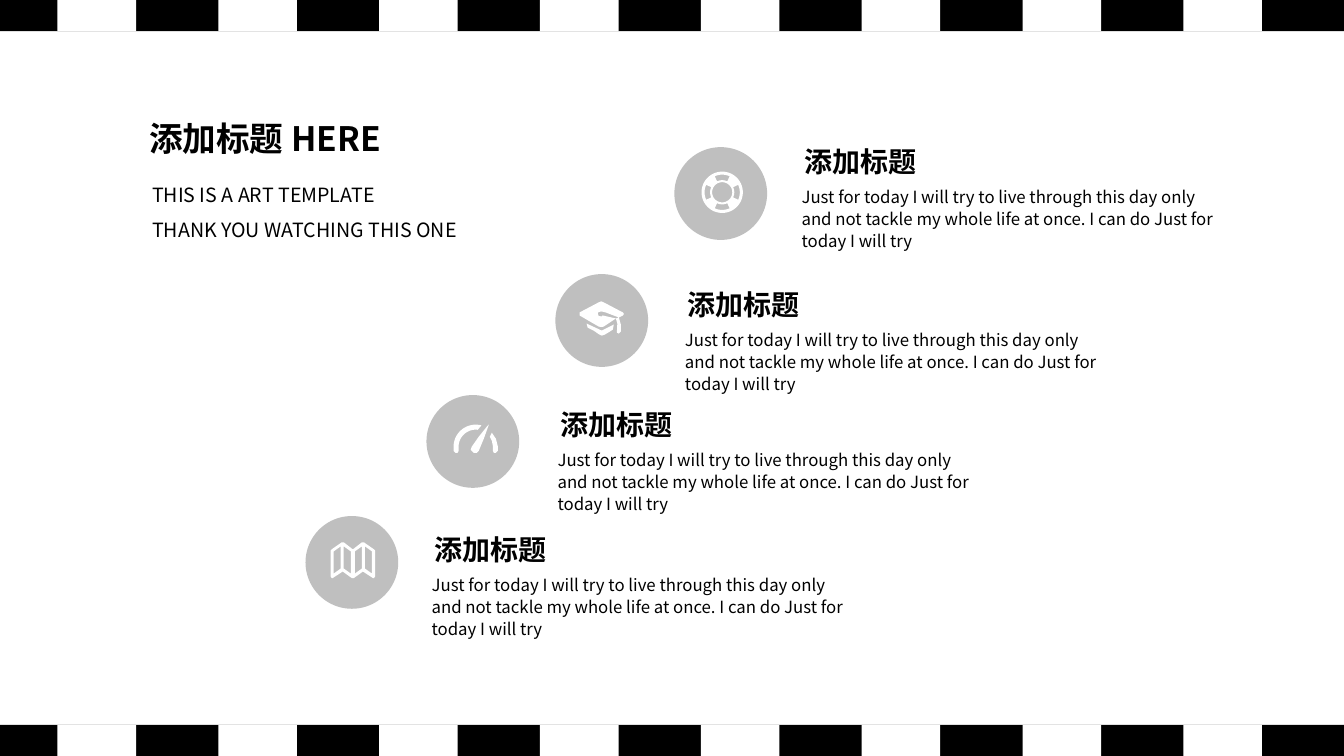
"""Build a slide with four stepped topics between two striped bands."""
import math
from dataclasses import dataclass
from typing import Any

import pptx
import pptx.dml.color
import pptx.enum.shapes
import pptx.enum.text
import pptx.oxml.ns
import pptx.util
from lxml import etree

Pt = pptx.util.Pt
Kind = pptx.enum.shapes.MSO_SHAPE
Point = tuple[float, float]
Outline = list[Point]


@dataclass(frozen=True)
class Theme:
    font: str = "Noto Sans CJK JP"
    black: str = "000000"
    white: str = "FFFFFF"
    grey: str = "BFBFBF"
    title: float = 24
    head: float = 20
    lead: float = 14
    body: float = 12


@dataclass(frozen=True)
class Topic:
    left: float
    top: float
    width: float
    disc: Point
    mark: Point
    icon: list[Outline]


THEME = Theme()
WIDTH, HEIGHT = 960, 540
BAND, GAP, FIRST, STEP = 22.32, 56.16, 41.04, 114.89
DISC = 66.24
UNIT = 0.72
FINE = 100
HEAD = "添加标题"
BODY = ("Just for today I will try to live through this day only and not tackle "
        "my whole life at once. I can do Just for today I will try")


def arc(mid: Point, size: float, start: float, end: float) -> Outline:
    """Return points along a circular arc, with angles in degrees."""
    count = max(2, round(abs(end - start) / 6))
    turns = [math.radians(start + (end - start) * i / count) for i in range(count + 1)]
    return [(mid[0] + size * math.cos(t), mid[1] + size * math.sin(t)) for t in turns]


def buoy() -> list[Outline]:
    """Return a life ring with four slots."""
    mid = (20.5, 20.5)
    slots = [arc(mid, 17.5, a - 25, a + 25) + arc(mid, 12, a + 25, a - 25)
             for a in range(0, 360, 90)]
    return [arc(mid, 20.5, 0, 360), arc(mid, 10, 0, 360), *slots]


def cap() -> list[Outline]:
    """Return a graduation cap with its tassel."""
    base = [(7, 22), (8, 26), (14, 29), (19, 32.5), (22, 34), (25, 33),
            (30, 30), (33, 28), (34, 23), (22, 29)]
    board = [(43, 11), (24, 1), (21.5, 0), (19, 1), (0, 11), (0, 14), (19, 25),
             (21.5, 25.5), (24, 25), (36, 17), (23, 14), (22, 15), (19, 14.5),
             (18, 12), (19, 10.5), (22, 10), (26, 11), (39, 16), (43, 14), (44, 12.5)]
    cord = [(37, 31), (39, 32), (41, 30), (41, 23), (39, 16), (36, 17), (37.5, 22)]
    return [base, board, cord]


def gauge() -> list[Outline]:
    """Return a dial with its needle."""
    mid = (22, 23)
    hand = [(18, 23), (17, 26), (20, 29), (23, 29), (25, 27), (30, 15),
            (35, 1), (33, 3), (25, 13)]
    left = (arc(mid, 22, 180, 285) + arc(mid, 17, 277, 180)
            + [(5, 27), (4, 29), (2, 29), (0, 27)])
    right = [(38, 9), (36, 13), (38, 17), (39, 22), (39, 27), (40, 29),
             (42, 29), (44, 27), (44, 23), (42, 15)]
    return [hand, left, right]


def chart() -> list[Outline]:
    """Return a folded map with four open panels."""
    edge = [(43, 7), (33, 0), (31, 0), (22, 7), (13, 0), (11, 0), (1, 7), (0, 8),
            (0, 34), (1, 35.5), (2, 35.5), (12, 29), (21, 35.5), (23, 35.5),
            (32, 29), (42, 35.5), (43, 35.5), (44, 34), (44, 8)]
    folds = [[(10, 26), (3, 31), (3, 9), (10, 4)], [(20, 31), (13, 26), (13, 4), (20, 9)]]
    panes = [[(x + move, y) for x, y in fold] for move in (0, 21) for fold in folds]
    return [edge, *panes]


def paint(shape: Any, fill: str) -> None:
    """Give a shape a plain fill with no line or shadow."""
    shape.shadow.inherit = False
    shape.fill.solid()
    shape.fill.fore_color.rgb = pptx.dml.color.RGBColor.from_string(fill)
    shape.line.fill.background()


def block(shapes: Any, kind: Any, left: float, top: float, width: float,
          height: float, fill: str) -> None:
    """Draw one preset shape."""
    shape = shapes.add_shape(kind, Pt(left), Pt(top), Pt(width), Pt(height))
    paint(shape, fill)


def trace(shapes: Any, spot: Point, icon: list[Outline], fill: str) -> None:
    """Draw all the outlines of an icon as one shape."""
    loops = [[(x * FINE, y * FINE) for x, y in loop] for loop in icon]
    pen = shapes.build_freeform(*loops[0][0], scale=Pt(UNIT) / FINE)
    for rank, loop in enumerate(loops):
        if rank:
            pen.move_to(*loop[0])
        pen.add_line_segments(loop[1:], close=True)
    paint(pen.convert_to_shape(Pt(spot[0]), Pt(spot[1])), fill)


def write(shapes: Any, text: str, *, left: float, top: float, width: float,
          height: float, size: float, bold: bool = False, wrap: bool = True,
          space: float = 1, side: float = 7.2, edge: float = 3.6) -> None:
    """Write text in a box, with one paragraph for each line."""
    box = shapes.add_textbox(Pt(left), Pt(top), Pt(width), Pt(height))
    frame = box.text_frame
    frame.word_wrap = wrap
    frame.auto_size = pptx.enum.text.MSO_AUTO_SIZE.SHAPE_TO_FIT_TEXT
    frame.margin_left = frame.margin_right = Pt(side)
    frame.margin_top = frame.margin_bottom = Pt(edge)
    for rank, line in enumerate(text.split("\n")):
        para = frame.add_paragraph() if rank else frame.paragraphs[0]
        para.line_spacing = float(space)
        run = para.add_run()
        run.text = line
        run.font.size = Pt(size)
        run.font.bold = bold
        run.font.color.rgb = pptx.dml.color.RGBColor.from_string(THEME.black)
        run.font.name = THEME.font
        east = etree.SubElement(run._r.get_or_add_rPr(), pptx.oxml.ns.qn("a:ea"))
        east.set("typeface", THEME.font)


def band(shapes: Any, top: float) -> None:
    """Draw a black band cut by white gaps."""
    group = shapes.add_group_shape().shapes
    block(group, Kind.RECTANGLE, 0, top, WIDTH, BAND, THEME.black)
    for i in range(8):
        block(group, Kind.RECTANGLE, FIRST + STEP * i, top, GAP, BAND, THEME.white)


def label(shapes: Any, topic: Topic) -> None:
    """Write the heading and body of a topic."""
    write(shapes, HEAD, left=topic.left, top=topic.top, width=115.92, height=41.76,
          size=THEME.head, bold=True, wrap=False, side=17.28, edge=8.64)
    write(shapes, BODY, left=topic.left - 2, top=topic.top + 28.8, width=topic.width,
          height=65.52, size=THEME.body, space=1.1, side=17.28, edge=8.64)


def badge(shapes: Any, topic: Topic) -> None:
    """Draw the disc and icon of a topic."""
    group = shapes.add_group_shape().shapes
    block(group, Kind.OVAL, *topic.disc, DISC, DISC, THEME.grey)
    trace(group, topic.mark, topic.icon, THEME.white)


def main() -> None:
    """Build and save the slide."""
    deck = pptx.Presentation()
    deck.slide_width, deck.slide_height = Pt(WIDTH), Pt(HEIGHT)
    shapes = deck.slides.add_slide(deck.slide_layouts[6]).shapes
    topics = [
        Topic(557.3, 94.3, 332, (481.7, 105.1), (501.1, 122.6), buoy()),
        Topic(474, 196.6, 339, (396.7, 195.8), (414, 215.3), cap()),
        Topic(383, 282.2, 332, (304.6, 282.2), (324, 302.6), gauge()),
        Topic(293, 371.5, 339, (218.2, 368.6), (236.2, 387.4), chart()),
    ]
    for top in (0, HEIGHT - BAND):
        band(shapes, top)
    for topic in topics:
        label(shapes, topic)
    for topic in topics:
        badge(shapes, topic)
    write(shapes, "添加标题 HERE", left=99.4, top=80.6, width=316.8, height=36,
          size=THEME.title, bold=True)
    write(shapes, "THIS IS A ART TEMPLATE\nTHANK YOU WATCHING THIS ONE", left=101.5,
          top=118.8, width=293.8, height=58.3, size=THEME.lead, space=1.5)
    deck.save("out.pptx")


if __name__ == "__main__":
    main()
